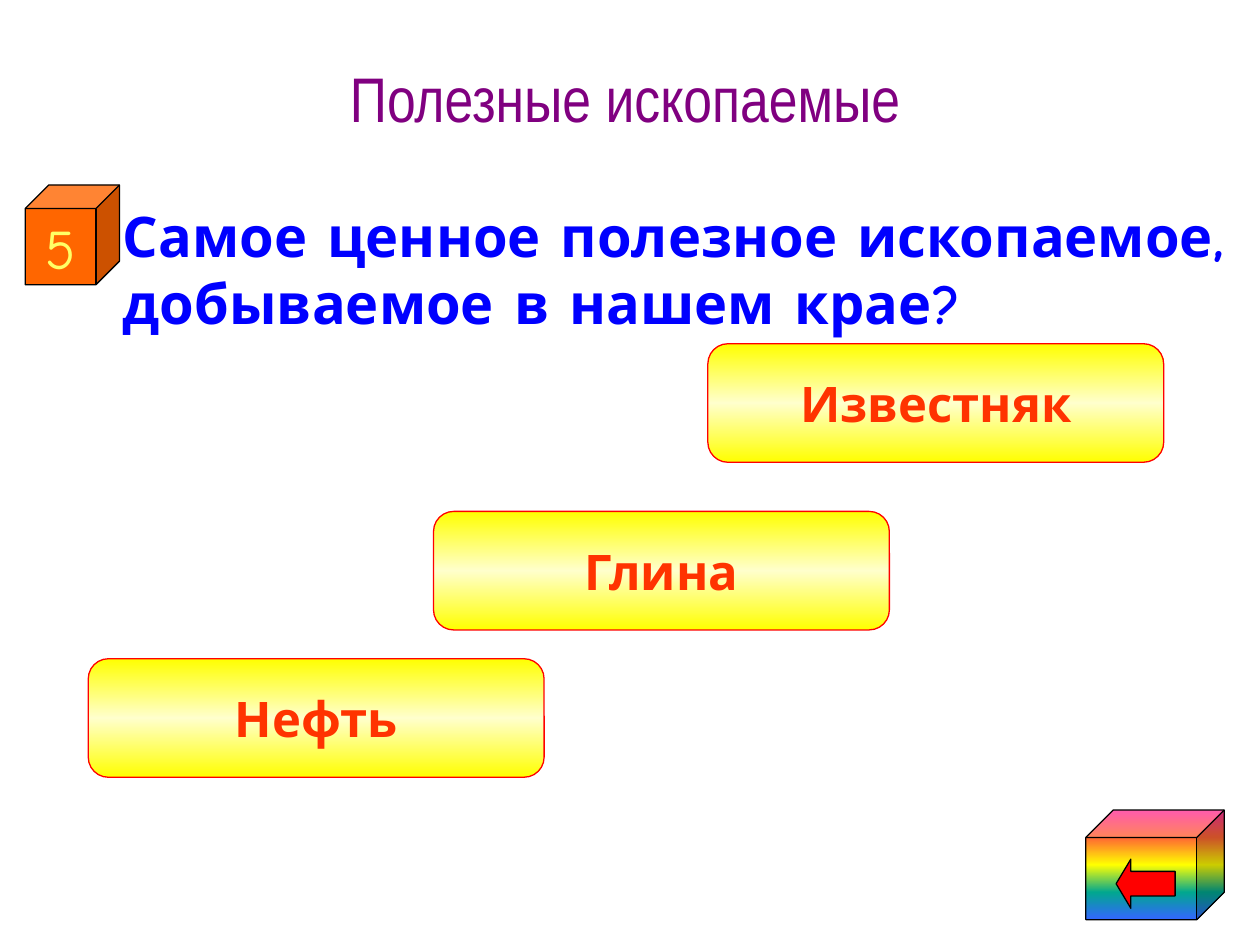
"""Build a quiz slide about minerals with three answer buttons."""
from copy import deepcopy

from pptx import Presentation
from pptx import util as u
from pptx.dml.color import RGBColor
from pptx.enum import shapes, text
from pptx.oxml import ns, xmlchemy

BLACK = RGBColor(0, 0, 0)
RED = RGBColor(0xFF, 0, 0)
ORANGE = RGBColor(0xFF, 0x66, 0)
ANSWER_RED = RGBColor(0xFF, 0x33, 0)
NUMBER_YELLOW = RGBColor(0xFF, 0xFF, 0x66)
QUESTION_BLUE = RGBColor(0, 0, 0xFF)
TITLE_PURPLE = RGBColor(0x80, 0, 0x80)
YELLOW = RGBColor(0xFF, 0xFF, 0)
CREAM = RGBColor(0xFF, 0xFF, 0xCC)
RAINBOW = [RGBColor(0xFF, 0x33, 0x99), RGBColor(0xFF, 0x66, 0x33), YELLOW,
           RGBColor(0x01, 0xA7, 0x8F), RGBColor(0x33, 0x66, 0xFF)]
GLOW = [YELLOW, CREAM, YELLOW]

TITLE_FORMAT = {"name": "Arial Narrow", "size": u.Pt(36), "bold": False}
QUESTION_FORMAT = {"name": "Comic Neue", "size": u.Pt(32), "bold": True}
ANSWER_FORMAT = {"name": "Comic Neue", "size": u.Pt(28), "bold": True}
NUMBER_FORMAT = {"name": "Comic Neue", "size": u.Pt(32), "bold": False}

ANSWERS = [("Нефть", 1.78, 13.28), ("Глина", 8.74, 10.31), ("Известняк", 14.27, 6.93)]


def write(holder, wording, font_format, color, align, anchor):
    """Put one formatted paragraph into a shape and return it."""
    frame = holder.text_frame
    frame.auto_size = text.MSO_AUTO_SIZE.NONE
    frame.word_wrap = True
    frame.vertical_anchor = anchor
    paragraph = frame.paragraphs[0]
    paragraph.alignment = align
    paragraph.space_before = u.Pt(0)
    run = paragraph.add_run()
    run.text = wording
    for key, value in font_format.items():
        setattr(run.font, key, value)
    run.font.color.rgb = color
    return paragraph


def place(holder, left, top, width, height):
    """Move and size a placeholder in centimetres."""
    for key, value in {"left": left, "top": top, "width": width, "height": height}.items():
        setattr(holder, key, u.Cm(value))


def fill_gradient(shape, colors):
    """Fill a shape with evenly spaced colours from top to bottom."""
    shape.fill.gradient()
    shape.fill.gradient_angle = 270
    stop_list = shape.element.spPr.find(".//" + ns.qn("a:gsLst"))
    for _ in colors[2:]:
        stop_list.append(deepcopy(stop_list[0]))
    for index, (stop, color) in enumerate(zip(shape.fill.gradient_stops, colors)):
        stop.position = index / (len(colors) - 1)
        stop.color.rgb = color


def add_figure(parent, kind, box, colors, line=BLACK, adjustments=(0.25,)):
    """Add an outlined preset shape with a solid or gradient fill."""
    figure = parent.add_shape(kind, *map(u.Cm, box))
    figure.shadow.inherit = False
    for index, value in enumerate(adjustments):
        figure.adjustments[index] = value
    if len(colors) > 1:
        fill_gradient(figure, colors)
    else:
        figure.fill.solid()
        figure.fill.fore_color.rgb = colors[0]
    figure.line.color.rgb = line
    figure.line.width = u.Pt(0.75)
    return figure


def add_question(body):
    """Write the question as an indented paragraph without a bullet."""
    place(body, 1.27, 3.94, 24.13, 4.19)
    question = write(body, "Самое ценное полезное ископаемое, добываемое в нашем крае?",
                     QUESTION_FORMAT, QUESTION_BLUE, text.PP_ALIGN.LEFT, text.MSO_ANCHOR.TOP)
    properties = question._p.get_or_add_pPr()
    properties.set("marL", str(u.Cm(0.95)))
    properties.set("indent", "0")
    properties.append(xmlchemy.OxmlElement("a:buNone"))


def add_answer(slide, wording, left, top):
    """Add one answer button."""
    button = add_figure(slide.shapes, shapes.MSO_SHAPE.ROUNDED_RECTANGLE,
                        (left, top, 9.19, 2.39), GLOW, RED, (0.17,))
    write(button, wording, ANSWER_FORMAT, ANSWER_RED,
          text.PP_ALIGN.CENTER, text.MSO_ANCHOR.MIDDLE)


def add_number(slide):
    """Add the cube with the question number."""
    cube = add_figure(slide.shapes, shapes.MSO_SHAPE.CUBE, (0.51, 3.73, 1.9, 2.01), [ORANGE])
    write(cube, "5", NUMBER_FORMAT, NUMBER_YELLOW,
          text.PP_ALIGN.CENTER, text.MSO_ANCHOR.MIDDLE)
    cube.text_frame.word_wrap = False


def add_back_button(slide):
    """Add the rainbow cube with its arrow as a group."""
    group = slide.shapes.add_group_shape()
    add_figure(group.shapes, shapes.MSO_SHAPE.CUBE, (21.89, 16.33, 2.79, 2.21), RAINBOW)
    add_figure(group.shapes, shapes.MSO_SHAPE.LEFT_ARROW, (22.5, 17.32, 1.19, 0.99),
               [RED], adjustments=(0.5, 0.3))


def main():
    """Build and save the slide."""
    deck = Presentation()
    deck.slide_width, deck.slide_height = u.Cm(25.4), u.Cm(19.05)
    slide = deck.slides.add_slide(deck.slide_layouts[1])
    title, body = slide.placeholders
    place(title, 1.9, 0.91, 21.41, 2.11)
    write(title, "Полезные ископаемые", TITLE_FORMAT, TITLE_PURPLE,
          text.PP_ALIGN.CENTER, text.MSO_ANCHOR.MIDDLE)
    add_question(body)
    add_back_button(slide)
    for answer in ANSWERS:
        add_answer(slide, *answer)
    add_number(slide)
    deck.save("out.pptx")


if __name__ == "__main__":
    main()
